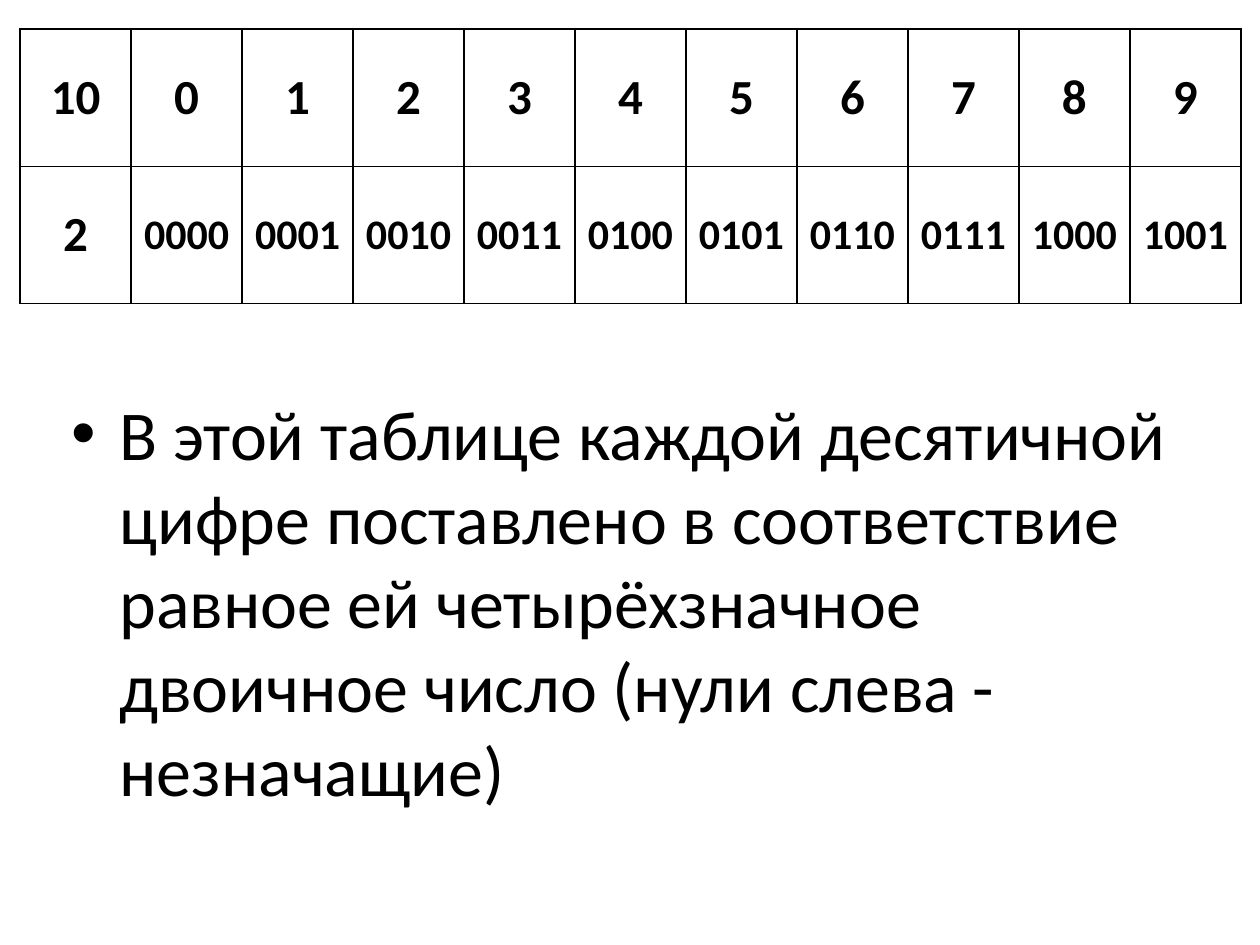
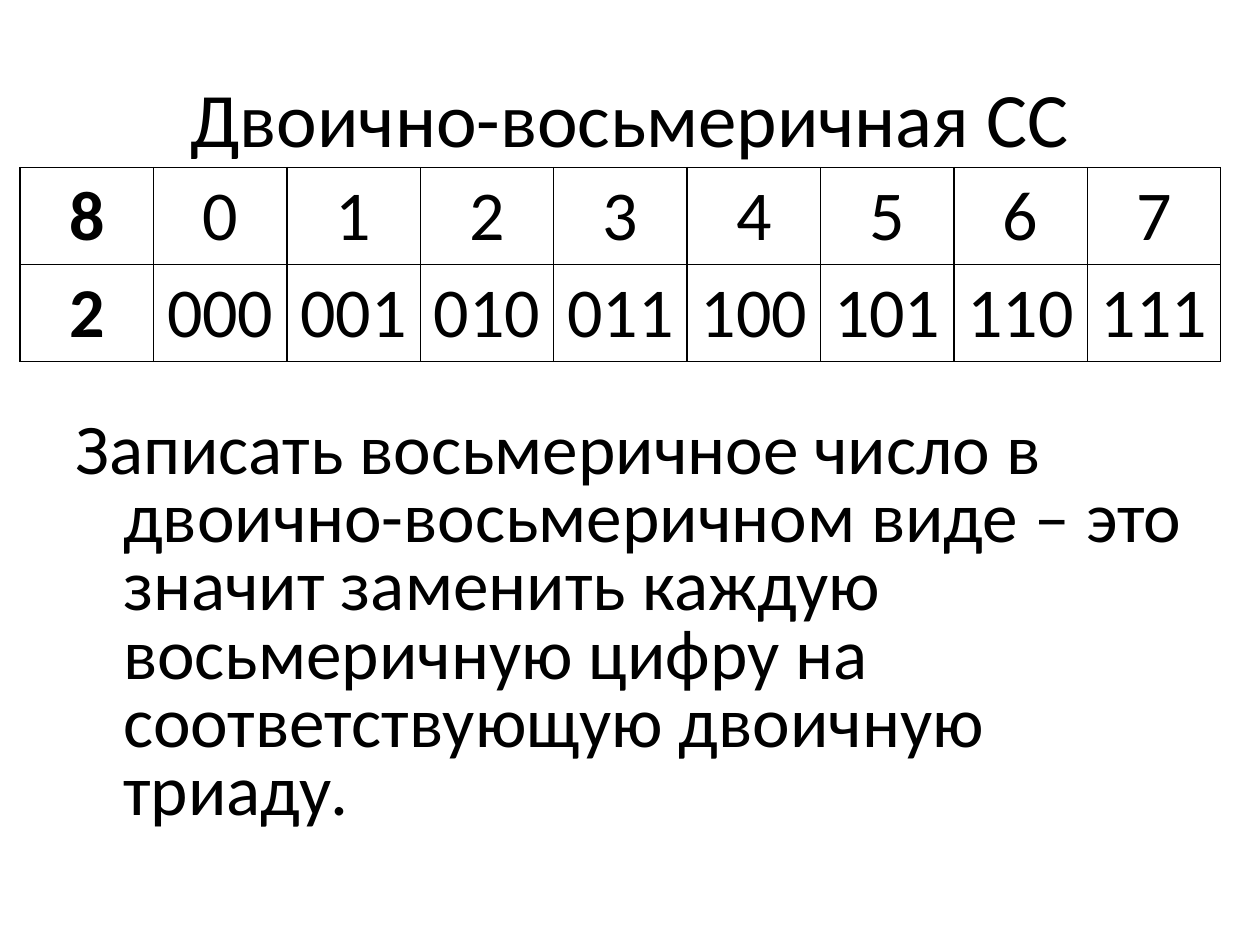
import pptx
import pptx.dml.color
import pptx.enum.text
import pptx.oxml
import pptx.oxml.ns
import pptx.util
from pptx.util import Inches

# Content
DECIMAL_CODES = [
    ["10"] + [str(digit) for digit in range(10)],
    ["2"] + [f"{digit:04b}" for digit in range(10)],
]
DECIMAL_NOTE = ("В этой таблице каждой десятичной цифре поставлено в соответствие "
                "равное ей четырёхзначное двоичное число (нули слева - незначащие)")
OCTAL_TITLE = "Двоично-восьмеричная СС"
OCTAL_CODES = [
    ["8"] + [str(digit) for digit in range(8)],
    ["2"] + [f"{digit:03b}" for digit in range(8)],
]
OCTAL_NOTE = ("Записать восьмеричное число в двоично-восьмеричном виде – это значит "
              "заменить каждую восьмеричную цифру на соответствующую двоичную триаду.")

# Shared style
FONT = "Calibri"
BLACK = pptx.dml.color.RGBColor(0, 0, 0)
CENTER = pptx.enum.text.PP_ALIGN.CENTER
MIDDLE = pptx.enum.text.MSO_ANCHOR.MIDDLE
TABLE_LEFT = 0.16
HANGING = Inches(0.38)


def add_run(paragraph, text, size, bold=False):
    run = paragraph.add_run()
    run.text = text
    run.font.name = FONT
    run.font.size = pptx.util.Pt(size)
    run.font.bold = bold
    run.font.color.rgb = BLACK


def add_frame(slide, left, top, width, height):
    frame = slide.shapes.add_textbox(*map(Inches, (left, top, width, height))).text_frame
    frame.word_wrap = True
    return frame


def add_title(slide, text):
    frame = add_frame(slide, 0.5, 0.3, 9, 1.25)
    frame.vertical_anchor = MIDDLE
    frame.paragraphs[0].alignment = CENTER
    add_run(frame.paragraphs[0], text, 44)


def add_note(slide, text, box, size, bullet=None, line_spacing=None):
    """Add a paragraph with a hanging indent, bulleted if a sign is given."""
    paragraph = add_frame(slide, *box).paragraphs[0]
    properties = paragraph._p.get_or_add_pPr()
    properties.set("marL", str(HANGING))
    properties.set("indent", str(-HANGING))
    if bullet:
        namespace = pptx.oxml.ns.nsdecls("a")
        properties.append(pptx.oxml.parse_xml(f'<a:buFont {namespace} typeface="Arial"/>'))
        properties.append(pptx.oxml.parse_xml(f'<a:buChar {namespace} char="{bullet}"/>'))
    if line_spacing:
        paragraph.line_spacing = line_spacing
    add_run(paragraph, text, size)


def add_borders(cell):
    properties = cell._tc.get_or_add_tcPr()
    for side in "LRTB":
        properties.append(pptx.oxml.parse_xml(
            f'<a:ln{side} {pptx.oxml.ns.nsdecls("a")} w="{pptx.util.Pt(1)}">'
            f'<a:solidFill><a:srgbClr val="{BLACK}"/></a:solidFill></a:ln{side}>'))


def add_code_table(slide, codes, top, width, row_height, style):
    """Draw the code table; style(row, column) gives the size and boldness."""
    table = slide.shapes.add_table(
        len(codes), len(codes[0]), Inches(TABLE_LEFT), Inches(top),
        Inches(width), Inches(row_height * len(codes))).table
    table.first_row = table.horz_banding = False
    for row, values in enumerate(codes):
        for column, value in enumerate(values):
            cell = table.cell(row, column)
            add_borders(cell)
            cell.fill.background()
            cell.vertical_anchor = MIDDLE
            paragraph = cell.text_frame.paragraphs[0]
            paragraph.alignment = CENTER
            add_run(paragraph, value, *style(row, column))


def main():
    deck = pptx.Presentation()
    deck.slide_width, deck.slide_height = Inches(10), Inches(7.5)
    blank = deck.slide_layouts[6]

    # Decimal digits as four binary digits
    decimal = deck.slides.add_slide(blank)
    add_note(decimal, DECIMAL_NOTE, (0.47, 3.05, 9, 3.6), 40, bullet="•")
    add_code_table(decimal, DECIMAL_CODES, 0.23, 9.69, 1.09,
                   lambda row, column: (24 if row and column else 28, True))

    # Octal digits as binary triads
    octal = deck.slides.add_slide(blank)
    add_title(octal, OCTAL_TITLE)
    add_code_table(octal, OCTAL_CODES, 1.33, 9.53, 0.77,
                   lambda row, column: (40, column == 0))
    add_note(octal, OCTAL_NOTE, (0.5, 3.28, 9, 3.42), 40.7, line_spacing=0.8)

    deck.save("out.pptx")


if __name__ == "__main__":
    main()
